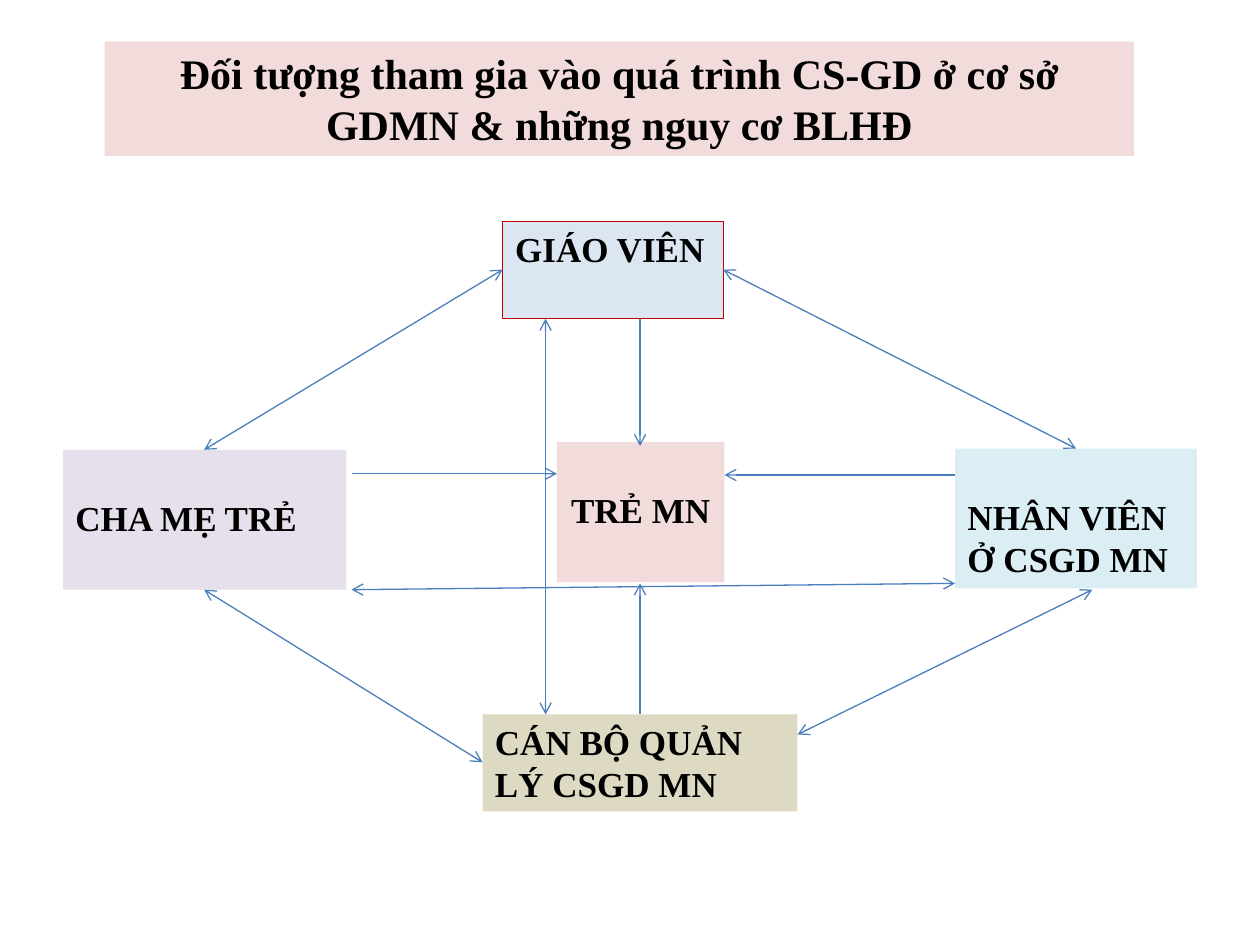
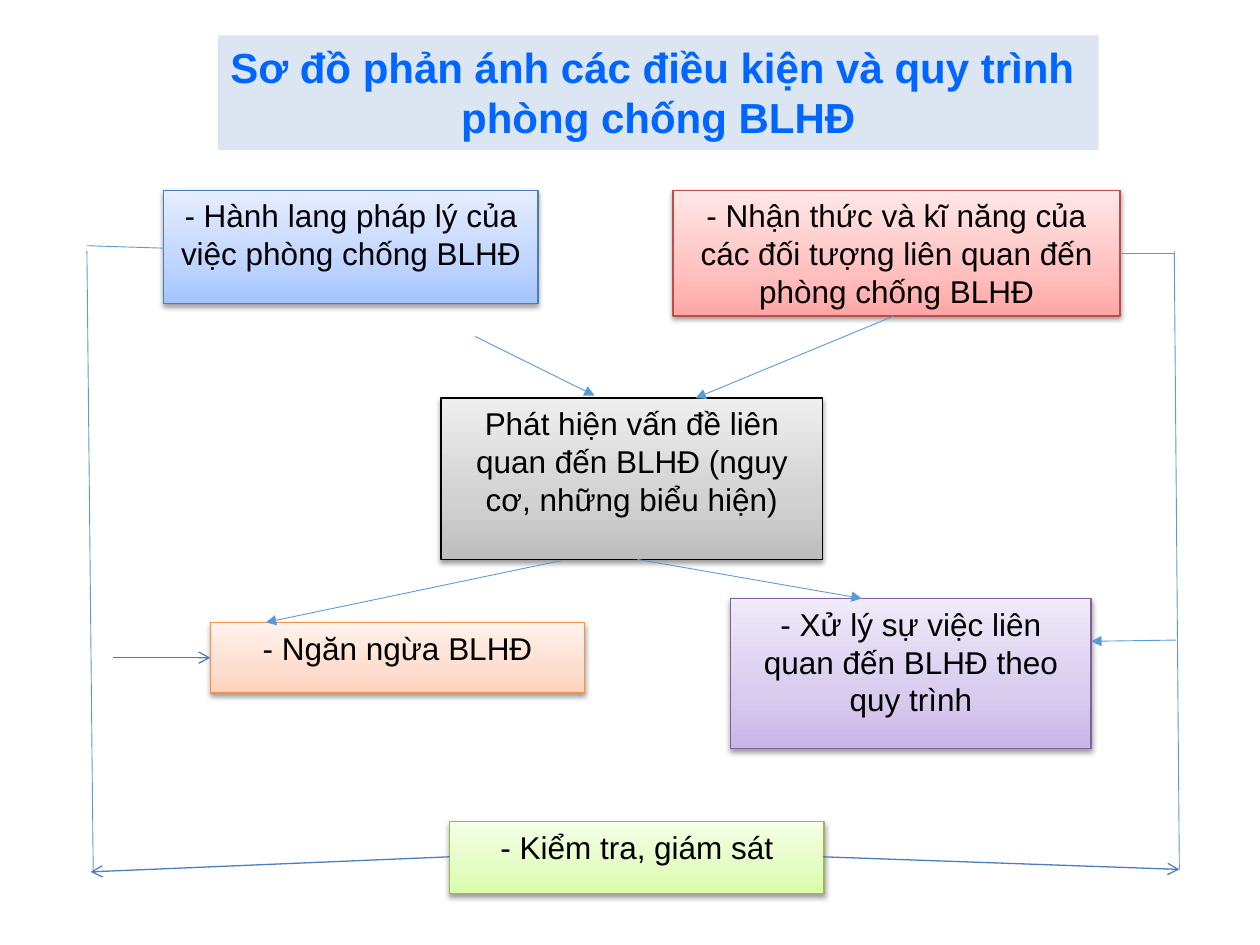
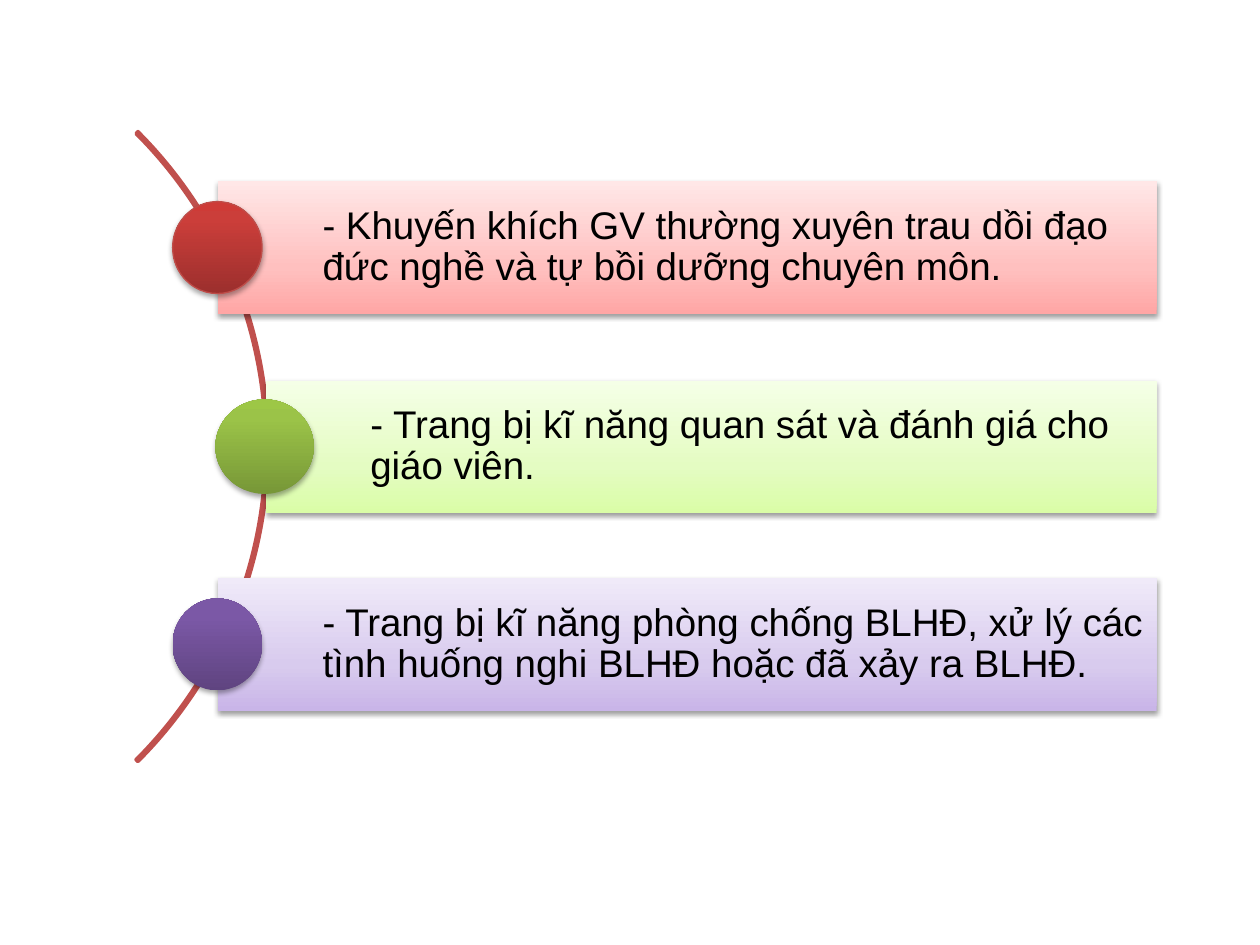
from copy import deepcopy
from lxml import etree
from pptx import Presentation
from pptx.dml.color import RGBColor
from pptx.enum import shapes, text
from pptx.oxml import ns
from pptx.util import Pt

SCALE = 9144
BLACK = RGBColor(0, 0, 0)
ROSE = RGBColor(0xF2, 0xDC, 0xDB)
ICE = RGBColor(0xDC, 0xE6, 0xF2)
AQUA = RGBColor(0xDB, 0xEE, 0xF4)
SAND = RGBColor(0xDD, 0xD9, 0xC3)
LILAC = RGBColor(0xE6, 0xE0, 0xEC)
CRIMSON = RGBColor(0xC0, 0, 0)
AZURE = RGBColor(0, 0x66, 0xFF)
STEEL = RGBColor(0x4B, 0x7E, 0xBC)
SKY = RGBColor(0x5B, 0x9B, 0xD5)
BRICK = RGBColor(0xBF, 0x4C, 0x48)
CURVE = RGBColor(0xC0, 0x50, 0x4D)
ORANGE = RGBColor(0xF6, 0x92, 0x40)
VIOLET = RGBColor(0x7D, 0x60, 0xA0)
LEAF = RGBColor(0x98, 0xB9, 0x55)


def ramp(mid, *codes):
    return tuple(zip((0, mid, 1), map(RGBColor.from_string, codes)))


BLUES = ramp(0.35, "A4C4FF", "BFD4FF", "E6EEFF")
REDS = ramp(0.35, "FFA6A5", "FFC0BF", "FFE7E7")
GRAYS = ramp(0.35, "BDBDBD", "D1D1D1", "EEEEEE")
PEACH = ramp(0.35, "FFD2BD", "FFDED0", "FFF2ED")
PLUMS = ramp(0.35, "C9B5E8", "D8CBEE", "F0EAF9")
LIMES = ramp(0.35, "DAFDA7", "E4FCC2", "F5FFE7")
RUBY = ramp(0.8, "9C2F2D", "CB3E3A", "CE3B37")
MOSS = ramp(0.8, "779737", "9BC348", "9DC746")
GRAPE = ramp(0.8, "5F4480", "7B58A6", "7C57A8")

SERIF, SANS = "Times New Roman", "Arial"
KINDS = shapes.MSO_SHAPE
LEFT, MID = text.PP_ALIGN.LEFT, text.PP_ALIGN.CENTER


def px(*nums):
    return [num * SCALE for num in nums]


def shade(shape, stops):
    shape.fill.gradient()
    shape.fill.gradient_angle = 90
    first = shape.element.spPr.find(".//" + ns.qn("a:gs"))
    first.addnext(deepcopy(first))
    for stop, (place, color) in zip(shape.fill.gradient_stops, stops):
        stop.position = place
        stop.color.rgb = color


def drop(shape, alpha=38, dist=1.6):
    effects = shape.element.spPr.find(ns.qn("a:effectLst"))
    cast = etree.SubElement(effects, ns.qn("a:outerShdw"), blurRad=str(Pt(3.1)),
                            dist=str(Pt(dist)), dir="5400000", rotWithShape="0")
    tint = etree.SubElement(cast, ns.qn("a:srgbClr"), val="000000")
    etree.SubElement(tint, ns.qn("a:alpha"), val=str(alpha * 1000))


def form(slide, kind, box, fill=None, line=None, width=0.75):
    shape = slide.shapes.add_shape(kind, *px(*box))
    shape.shadow.inherit = False
    if fill is None:
        shape.fill.background()
    elif isinstance(fill, RGBColor):
        shape.fill.solid()
        shape.fill.fore_color.rgb = fill
    else:
        shade(shape, fill)
    if line is None:
        shape.line.fill.background()
    else:
        shape.line.color.rgb = line
        shape.line.width = Pt(width)
    return shape


def write(shape, words, size, font, color=BLACK, bold=False, align=LEFT,
          pads=(10, 5, 10, 5), anchor=text.MSO_ANCHOR.TOP):
    frame = shape.text_frame
    frame.text = words
    frame.word_wrap = True
    frame.vertical_anchor = anchor
    (frame.margin_left, frame.margin_top,
     frame.margin_right, frame.margin_bottom) = px(*pads)
    for para in frame.paragraphs:
        para.alignment = align
        for run in para.runs:
            run.font.size, run.font.name, run.font.bold = Pt(size), font, bold
            run.font.color.rgb = color
    return frame


def title(slide, box, words, fill, font, color):
    shape = form(slide, KINDS.RECTANGLE, box, fill)
    return write(shape, words, 24, font, color, True, MID)


def link(slide, area, ends, color=STEEL, width=0.75, head=None, tail=None):
    left, top = area
    x1, y1, x2, y2 = ends
    wire = slide.shapes.add_connector(
        shapes.MSO_CONNECTOR.STRAIGHT,
        *px(left + x1, top + y1, left + x2, top + y2))
    wire.line.color.rgb = color
    wire.line.width = Pt(width)
    for tag, tip in (("a:headEnd", head), ("a:tailEnd", tail)):
        if tip:
            etree.SubElement(wire.line._get_or_add_ln(), ns.qn(tag), type=tip)
    etree.SubElement(wire.element.spPr, ns.qn("a:effectLst"))


def roles(slide, area):
    left, top = area
    for x, y, wide, high, words, fill, line, align, pad in (
        (392, 175, 133, 111, "TRẺ MN", ROSE, None, MID, 37),
        (349, 0, 175, 77, "GIÁO VIÊN", ICE, CRIMSON, LEFT, 5),
        (708, 180, 192, 111, "NHÂN VIÊN Ở CSGD MN", AQUA, None, LEFT, 37),
        (333, 391, 250, 77, "CÁN BỘ QUẢN LÝ CSGD MN", SAND, None, LEFT, 5),
        (0, 181, 225, 111, "CHA MẸ TRẺ", LILAC, None, LEFT, 37),
    ):
        shape = form(slide, KINDS.RECTANGLE, (left + x, top + y, wide, high), fill, line)
        write(shape, words, 20, SERIF, bold=True, align=align, pads=(10, pad, 10, 5))
    for ends in ((458, 77, 458, 178), (229, 200, 392, 200),
                 (708, 201, 525, 201), (458, 391, 458, 287)):
        link(slide, area, ends, tail="arrow")
    for ends in ((112, 181, 349, 38), (583, 407, 817, 292), (112, 292, 333, 429),
                 (524, 38, 804, 180), (383, 77, 383, 391), (229, 292, 708, 287)):
        link(slide, area, ends, head="arrow", tail="arrow")


def steps(slide, area):
    left, top = area
    for x, y, wide, high, words, fill, line in (
        (61, 0, 297, 90, "- Hành lang pháp lý của việc phòng chống BLHĐ", BLUES, STEEL),
        (465, 0, 355, 100, "- Nhận thức và kĩ năng của các đối tượng liên quan đến "
         "phòng chống BLHĐ", REDS, BRICK),
        (281, 165, 303, 128, "Phát hiện vấn đề liên quan đến BLHĐ (nguy cơ, "
         "những biểu hiện)", GRAYS, BLACK),
        (98, 343, 297, 56, "- Ngăn ngừa BLHĐ", PEACH, ORANGE),
        (511, 324, 286, 119, "- Xử lý sự việc liên quan đến BLHĐ theo quy trình",
         PLUMS, VIOLET),
        (288, 501, 297, 57, "- Kiểm tra, giám sát", LIMES, LEAF),
    ):
        shape = form(slide, KINDS.RECTANGLE, (left + x, top + y, wide, high), fill, line)
        drop(shape)
        write(shape, words, 18, SANS, align=MID)
    for ends in ((308, 116, 403, 163), (640, 100, 483, 165), (376, 294, 142, 343),
                 (437, 293, 615, 324), (864, 357, 797, 358)):
        link(slide, area, ends, SKY, 0.5, tail="triangle")
    for ends in ((61, 46, 0, 44), (0, 48, 5, 541),
                 (863, 48, 867, 539), (863, 50, 820, 50)):
        link(slide, area, ends, SKY, 0.5)
    for ends in ((21, 371, 98, 371), (584, 529, 867, 539), (288, 529, 3, 541)):
        link(slide, area, ends, tail="arrow")


def arc(slide, box):
    shape = form(slide, KINDS.BLOCK_ARC, box, line=CURVE, width=2)
    for spot, value in enumerate((189, 27, 0.003)):
        shape.adjustments[spot] = value


def bar(slide, box, words, fill, dot, size, rim=None):
    left, top, _, high = box
    band = form(slide, KINDS.RECTANGLE, box, fill)
    drop(band)
    frame = write(band, words, 22, SANS, pads=(83, 6, 6, 6),
                  anchor=text.MSO_ANCHOR.MIDDLE)
    frame.paragraphs[0].line_spacing = 0.9
    wide, tall = size
    knob = form(slide, KINDS.OVAL,
                (left - wide // 2 - 1, top + (high - tall) // 2, wide, tall), dot, rim)
    drop(knob, 35, 1.8)


def advice(slide, box):
    left, top, wide, high = box
    arc(slide, (left - 667, top - 143, 707, 707))
    for y, inset, words, fill, dot, size, rim in (
        (0, 0, "- Khuyến khích GV thường xuyên trau dồi đạo đức nghề và tự bồi "
         "dưỡng chuyên môn.", REDS, RUBY, (71, 73), BRICK),
        (158, 38, "- Trang bị kĩ năng quan sát và đánh giá cho giáo viên.",
         LIMES, MOSS, (78, 75), None),
        (315, 0, "- Trang bị kĩ năng phòng chống BLHĐ, xử lý các tình huống nghi "
         "BLHĐ hoặc đã xảy ra BLHĐ.", PLUMS, GRAPE, (71, 73), None),
    ):
        bar(slide, (left + inset, top + y, wide - inset, high),
            words, fill, dot, size, rim)


def main():
    deck = Presentation()
    deck.slide_width, deck.slide_height = px(1000, 750)
    who, flow, tips = (deck.slides.add_slide(deck.slide_layouts[6]) for _ in range(3))
    title(who, (83, 33, 817, 91), "Đối tượng tham gia vào quá trình CS-GD ở cơ sở "
          "GDMN & những nguy cơ BLHĐ", ROSE, SERIF, BLACK)
    roles(who, (50, 176))
    steps(flow, (69, 151))
    head = title(flow, (173, 28, 699, 91), "Sơ đồ phản ánh các điều kiện và quy trình\n"
                 "phòng chống BLHĐ", ICE, SANS, AZURE)
    head.paragraphs[0].alignment = LEFT
    advice(tips, (173, 144, 745, 105))
    deck.save("out.pptx")


if __name__ == "__main__":
    main()
